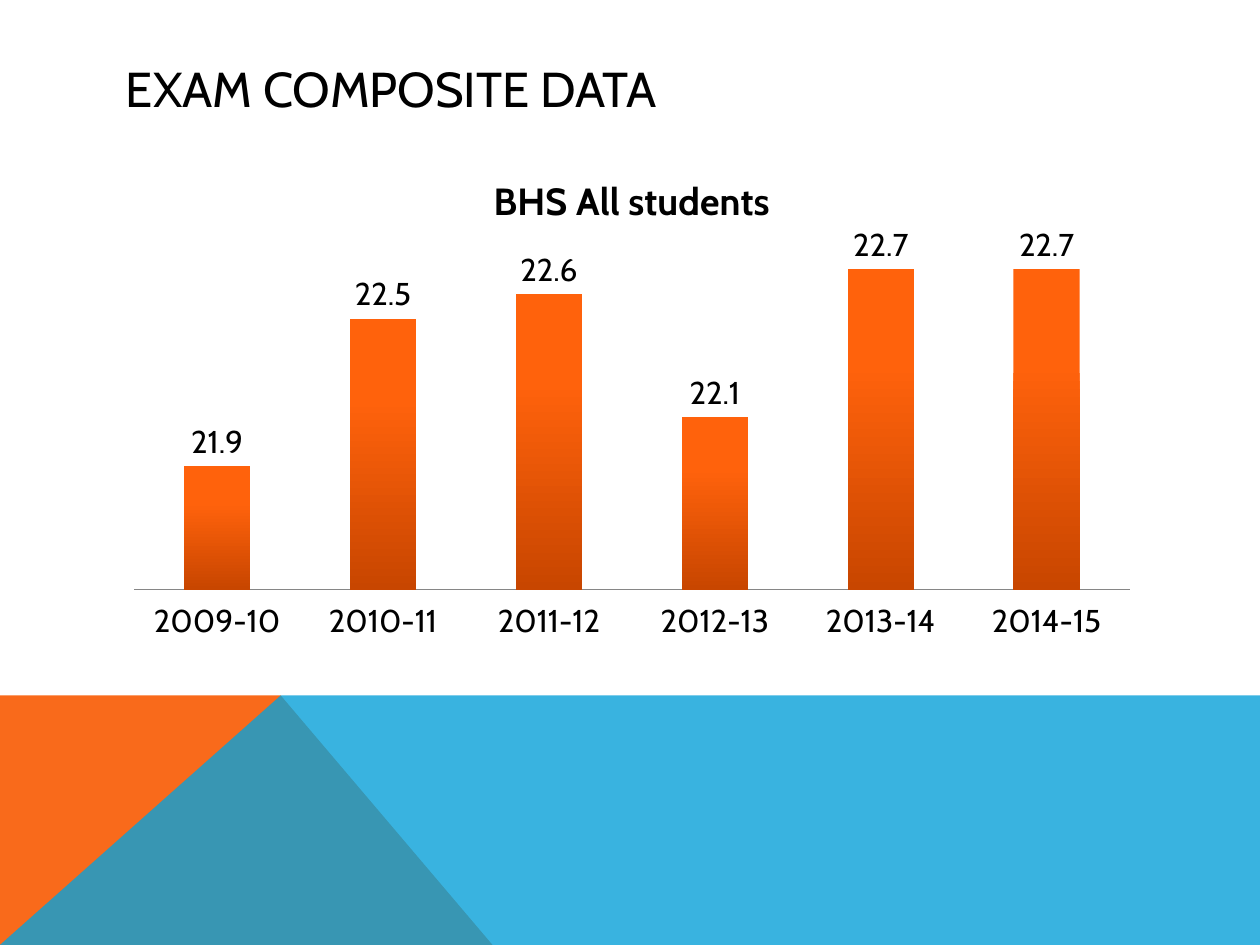
from lxml import etree
from pptx import Presentation
from pptx.chart.data import CategoryChartData as Data
from pptx.dml.color import RGBColor as RGB
from pptx.enum.chart import XL_CHART_TYPE as Kind, XL_LABEL_POSITION as Spot
from pptx.enum.chart import XL_TICK_LABEL_POSITION as Tags, XL_TICK_MARK as Tick
from pptx.enum.text import MSO_ANCHOR as Anchor
from pptx.oxml import parse_xml
from pptx.oxml.ns import nsdecls, qn
from pptx.util import Cm, Pt

HUES = {"text": "000000", "orange": "F96A1B", "blue": "08A1D9",
        "top": "FF620C", "base": "C84600", "axis": "868686"}
FACE = "Cabin"
WIDE, HIGH = 25.4, 19.05
BAND, PEAK, FOOT = 14.02, 5.66, 9.93  # band top, apex and foot of the slopes
YEARS = ["2009-10", "2010-11", "2011-12", "2012-13", "2013-14", "2014-15"]
MEANS = [21.9, 22.5, 22.6, 22.1, 22.7, 22.7]


def hue(name):
    return RGB.from_string(HUES[name])


def style(item, **vals):
    for key, val in vals.items():
        setattr(item, key, val)


def set_font(font, size, bold=False):
    style(font, name=FACE, size=Pt(size), bold=bold)
    font.color.rgb = hue("text")


def add_area(slide, spots, name, alpha=None):
    pts = [(Cm(x), Cm(y)) for x, y in spots]
    pen = slide.shapes.build_freeform(*pts[0])
    pen.add_line_segments(pts[1:], close=True)
    area = pen.convert_to_shape()
    area.shadow.inherit = False
    area.fill.solid()
    area.fill.fore_color.rgb = hue(name)
    area.line.fill.background()
    if alpha:
        tone = area._element.spPr.find(".//" + qn("a:srgbClr"))
        etree.SubElement(tone, qn("a:alpha")).set("val", str(alpha * 1000))


def add_title(slide, text):
    box = slide.shapes.add_textbox(Cm(2.29), Cm(1.02), Cm(20.88), Cm(1.52))
    style(box.text_frame, word_wrap=True, vertical_anchor=Anchor.MIDDLE)
    run = box.text_frame.paragraphs[0].add_run()
    run.text = text
    set_font(run.font, 28)


def place_plot(chart, x, y, w, h):
    vals = {"xMode": "edge", "yMode": "edge", "x": x, "y": y, "w": w, "h": h}
    rows = "".join(f'<c:{key} val="{val}"/>' for key, val in vals.items())
    area = chart._chartSpace.chart.plotArea
    for old in area.findall(qn("c:layout")):
        area.remove(old)
    area.insert(0, parse_xml(
        f'<c:layout {nsdecls("c")}><c:manualLayout>'
        f'<c:layoutTarget val="inner"/>{rows}</c:manualLayout></c:layout>'))


def add_bars(slide, name):
    data = Data(number_format="0.0")
    data.categories = YEARS
    data.add_series(name, MEANS)
    chart = slide.shapes.add_chart(Kind.COLUMN_CLUSTERED, Cm(2.29), Cm(3.05),
                                   Cm(20.9), Cm(9.93), data).chart
    style(chart, has_legend=False, has_title=True)
    set_font(chart.font, 18)

    # Chart title
    frame = chart.chart_title.text_frame
    frame.text = name
    set_font(frame.paragraphs[0].runs[0].font, 21.6, True)
    chart.chart_title.include_in_layout = False

    # Axes
    style(chart.value_axis, visible=False, has_major_gridlines=False,
          minimum_scale=21.4, maximum_scale=22.8)
    style(chart.category_axis, major_tick_mark=Tick.NONE,
          minor_tick_mark=Tick.NONE, tick_label_position=Tags.LOW)
    line = chart.category_axis.format.line
    line.color.rgb = hue("axis")
    line.width = Pt(1)
    place_plot(chart, 0.02, 0.19, 0.96, 0.7)

    # Bars and their labels
    plot = chart.plots[0]
    style(plot, gap_width=150, overlap=-25, vary_by_categories=False,
          has_data_labels=True)
    style(plot.data_labels, show_value=True, position=Spot.OUTSIDE_END,
          number_format="0.0", number_format_is_linked=False)
    set_font(plot.data_labels.font, 18)
    fill = plot.series[0].format.fill
    fill.gradient()
    fill.gradient_angle = 270
    for stop, tone, pos in zip(fill.gradient_stops, ("top", "base"), (0.3, 1)):
        stop.color.rgb = hue(tone)
        stop.position = pos


def main():
    deck = Presentation()
    style(deck, slide_width=Cm(WIDE), slide_height=Cm(HIGH))
    slide = deck.slides.add_slide(deck.slide_layouts[6])

    # Bottom band
    add_area(slide, [(0, HIGH), (0, BAND), (PEAK, BAND), (FOOT, HIGH)], "orange")
    add_area(slide, [(0, HIGH), (PEAK, BAND), (WIDE, BAND), (WIDE, HIGH)],
             "blue", 80)

    # Heading and chart
    add_title(slide, "EXAM COMPOSITE DATA")
    add_bars(slide, "BHS All students")
    deck.save("out.pptx")


if __name__ == "__main__":
    main()
